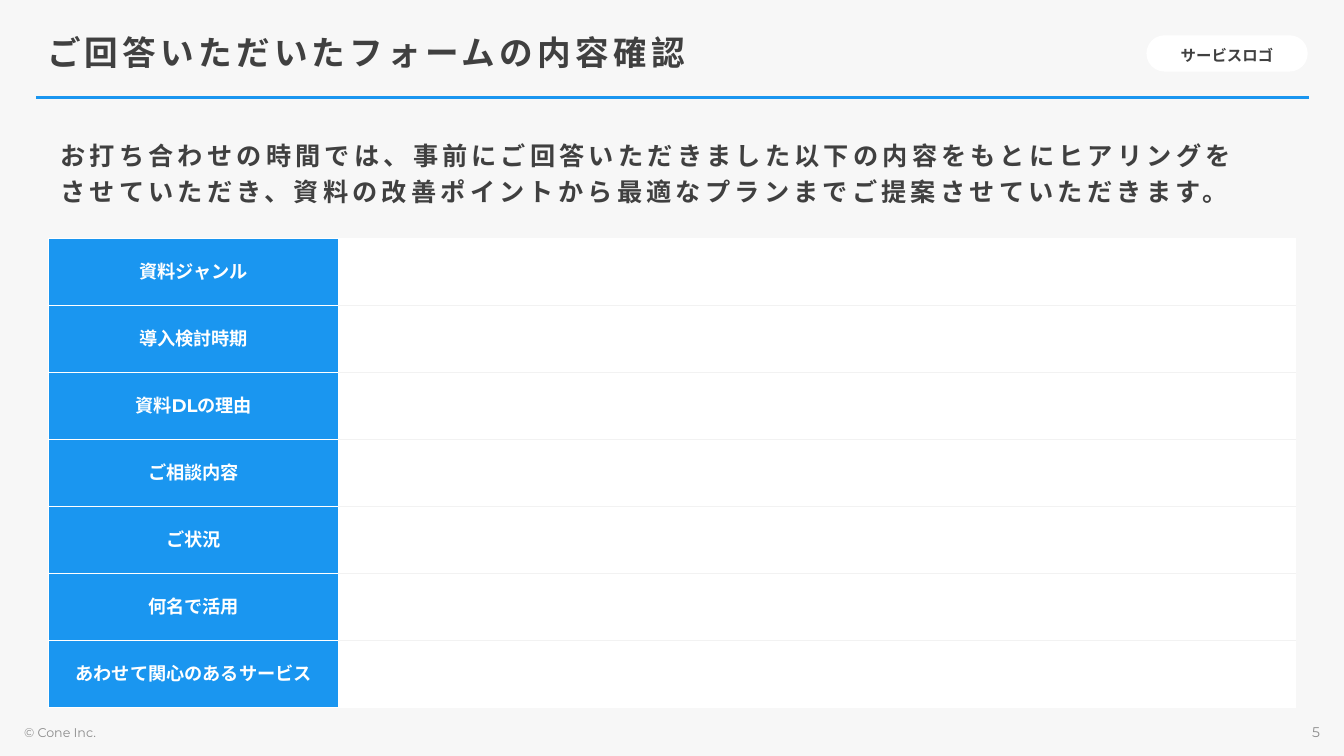
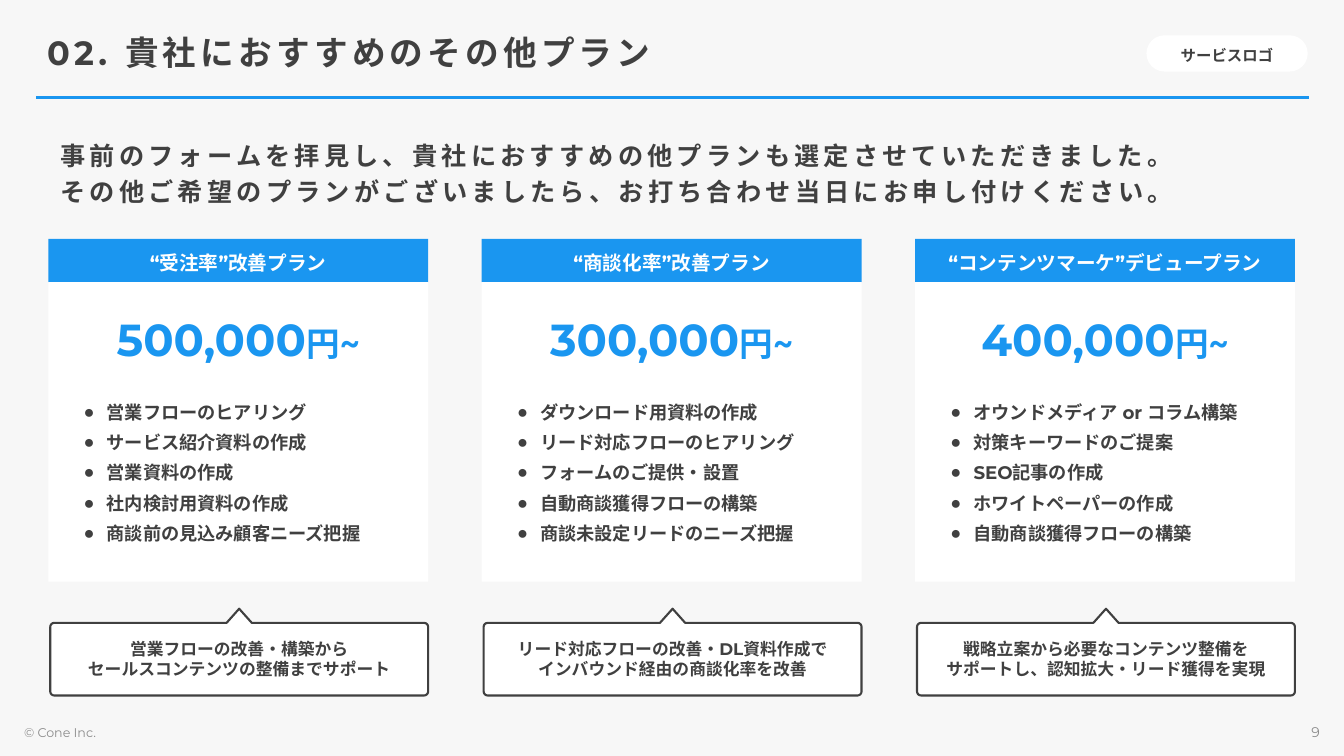
"""Build a form confirmation slide and a recommended plans slide."""
import math
from dataclasses import dataclass

from lxml import etree
from pptx import Presentation
from pptx import util as u
from pptx.dml.color import RGBColor
from pptx.enum import shapes, text
from pptx.oxml.ns import qn


@dataclass(frozen=True)
class Theme:
    """Colours, font and type sizes shared by the slides."""
    font: str = "Montserrat"
    page: str = "F7F7F7"
    rule: str = "F2F2F2"
    accent: str = "1A96F0"
    paper: str = "FFFFFF"
    ink: str = "404040"
    muted: str = "8C8C8C"
    title: int = 24
    lead: int = 18
    price: int = 32
    plan: int = 14
    item: int = 13
    note: int = 12
    logo: int = 11
    number: int = 10
    footer: int = 9


@dataclass(frozen=True)
class Box:
    """A rectangle in inches, divided into 100 columns and 100 rows."""
    left: float
    top: float
    width: float
    height: float

    def area(self, column, row, columns, rows):
        """Return the box that covers the given columns and rows."""
        return Box(self.left + self.width * column / 100, self.top + self.height * row / 100,
                   self.width * columns / 100, self.height * rows / 100)

    def columns(self, count, gap):
        """Return equal boxes side by side, with gaps given in columns."""
        share = (100 - gap * (count - 1)) / count
        return [self.area(index * (share + gap), 0, share, 100) for index in range(count)]

    def emu(self):
        """Return left, top, width and height as lengths."""
        return [u.Inches(value) for value in (self.left, self.top, self.width, self.height)]


THEME = Theme()
PAGE = Box(0, 0, 13.33, 7.5)
CONTENT = PAGE.area(3.6, 31.6, 92.75, 62)
PLANS = PAGE.area(3.6, 31.6, 92.75, 60.4)
LABEL_INSETS = (0.1, 0.08, 0.1, 0.04)
CENTER = text.PP_ALIGN.CENTER
MIDDLE = text.MSO_ANCHOR.MIDDLE


def rgb(value):
    """Turn a hex string into a colour."""
    return RGBColor.from_string(value)


def style(para, size, color, bold=True, tracking=0, bullet=None):
    """Set the bullet and the font of one paragraph."""
    props = para._p.get_or_add_pPr()
    if bullet:
        props.set("marL", str(u.Inches(0.27)))
        props.set("indent", str(u.Inches(-0.23)))
        etree.SubElement(props, qn("a:buFont"), typeface="Arial")
        etree.SubElement(props, qn("a:buChar"), char=bullet)
    para.font.name = THEME.font
    para.font.size = u.Pt(size)
    para.font.bold = bold
    para.font.color.rgb = rgb(color)
    default = props.find(qn("a:defRPr"))
    etree.SubElement(default, qn("a:ea"), typeface=THEME.font)
    if tracking:
        default.set("spc", str(tracking * 100))


def write(frame, lines, size, color, insets=(0.1, 0.05, 0.1, 0.05), anchor=MIDDLE,
          align=text.PP_ALIGN.LEFT, leading=None, before=0, **font):
    """Fill a text frame with one paragraph for each line."""
    frame.word_wrap = True
    frame.vertical_anchor = anchor
    (frame.margin_left, frame.margin_top,
     frame.margin_right, frame.margin_bottom) = map(u.Inches, insets)
    for index, line in enumerate(lines):
        para = frame.add_paragraph() if index else frame.paragraphs[0]
        para.add_run().text = line
        para.alignment = align
        if leading:
            para.line_spacing = leading
        if index and before:
            para.space_before = u.Pt(before)
        style(para, size, color, **font)


def add_text(page, box, lines, size, color, **options):
    """Add a text box."""
    label = page.shapes.add_textbox(*box.emu())
    write(label.text_frame, lines, size, color, **options)
    return label


def add_panel(page, box, fill, kind=shapes.MSO_SHAPE.RECTANGLE):
    """Add a filled shape without outline."""
    panel = page.shapes.add_shape(kind, *box.emu())
    panel.shadow.inherit = False
    panel.fill.solid()
    panel.fill.fore_color.rgb = rgb(fill)
    panel.line.fill.background()
    return panel


def add_rule(page, box):
    """Draw the accent line along the top of a box."""
    left, top, width, _ = box.emu()
    rule = page.shapes.add_connector(shapes.MSO_CONNECTOR.STRAIGHT, left, top, left + width, top)
    rule.line.color.rgb = rgb(THEME.accent)
    rule.line.width = u.Pt(2)
    etree.SubElement(rule._element.spPr, qn("a:effectLst"))


def add_page(deck, title, lead, number):
    """Add a slide with its title band, lead text and footer."""
    page = deck.slides.add_slide(deck.slide_layouts[6])
    page.background.fill.solid()
    page.background.fill.fore_color.rgb = rgb(THEME.page)
    add_rule(page, PAGE.area(2.7, 12.93, 94.67, 0))
    add_text(page, PAGE.area(2.78, 2.8, 82, 8.4), [title], THEME.title, THEME.ink,
             insets=(0.1, 0.08, 0.1, 0.05), leading=0.9, tracking=3)
    logo = add_panel(page, PAGE.area(85.3, 4.67, 12, 4.8), THEME.paper,
                     shapes.MSO_SHAPE.ROUNDED_RECTANGLE)
    logo.adjustments[0] = 0.5
    write(logo.text_frame, ["サービスロゴ"], THEME.logo, THEME.ink,
          insets=LABEL_INSETS, align=CENTER)
    add_text(page, PAGE.area(3.75, 16.93, 92.5, 12.13), lead, THEME.lead, THEME.ink,
             insets=(0.1, 0.16, 0.1, 0.05), anchor=text.MSO_ANCHOR.TOP,
             leading=0.9, before=6, tracking=3)
    add_text(page, PAGE.area(1.05, 95.07, 22.5, 3.6), ["© Cone Inc."],
             THEME.footer, THEME.muted, bold=False)
    add_text(page, PAGE.area(76.45, 95.07, 22.5, 3.6), [str(number)],
             THEME.number, THEME.muted, bold=False, align=text.PP_ALIGN.RIGHT)
    return page


def paint_cell(cell, fill, borders):
    """Set the fill and the borders of a table cell."""
    props = cell._tc.get_or_add_tcPr()
    for side in ("L", "R", "T", "B"):
        line = etree.SubElement(props, qn(f"a:ln{side}"), w=str(u.Pt(1)))
        solid = etree.SubElement(line, qn("a:solidFill"))
        etree.SubElement(solid, qn("a:srgbClr"), val=borders.get(side, THEME.paper))
    cell.fill.solid()
    cell.fill.fore_color.rgb = rgb(fill)


def add_form(page, box, labels):
    """Add the table of form labels with empty answers."""
    table = page.shapes.add_table(len(labels), 2, *box.emu()).table
    table.first_row = table.horz_banding = False
    for column, share in zip(table.columns, (23.3, 76.7)):
        column.width = u.Inches(box.width * share / 100)
    last = len(labels) - 1
    for index, label in enumerate(labels):
        table.rows[index].height = u.Inches(box.height / len(labels))
        name, answer = table.cell(index, 0), table.cell(index, 1)
        write(name.text_frame, [label], THEME.item, THEME.paper, align=CENTER)
        name.vertical_anchor = MIDDLE
        paint_cell(name, THEME.accent, {})
        inner = {"T": index > 0, "B": index < last}
        paint_cell(answer, THEME.paper, {side: THEME.rule for side, shown in inner.items() if shown})


def callout_points(box):
    """Return the outline of a rounded box with a pointer on top."""
    radius, half, rise = 0.04, 0.125, box.height * 0.163
    right, bottom = box.left + box.width, box.top + box.height
    middle, shoulder = box.left + box.width / 2, box.top + rise
    corners = [(right - radius, shoulder + radius), (right - radius, bottom - radius),
               (box.left + radius, bottom - radius), (box.left + radius, shoulder + radius)]
    points = [(middle, box.top), (middle + half, shoulder)]
    for quarter, (x, y) in enumerate(corners):
        for step in range(5):
            angle = math.radians(90 * (quarter - 1) + 22.5 * step)
            points.append((x + radius * math.cos(angle), y + radius * math.sin(angle)))
    return points + [(middle - half, shoulder)]


def add_callout(page, box, lines):
    """Add the outlined note that points up at its card."""
    start, *rest = [(u.Inches(x), u.Inches(y)) for x, y in callout_points(box)]
    builder = page.shapes.build_freeform(*start)
    builder.add_line_segments(rest, close=True)
    note = builder.convert_to_shape()
    note.shadow.inherit = False
    note.fill.solid()
    note.fill.fore_color.rgb = rgb(THEME.paper)
    note.line.color.rgb = rgb(THEME.ink)
    note.line.width = u.Pt(1.5)
    write(note.text_frame, lines, THEME.note, THEME.ink,
          insets=(0.1, 0.22, 0.1, 0.08), align=CENTER)


def add_plan(page, box, name, price, items, note):
    """Add one plan: heading, price, list of items and note."""
    heading = add_panel(page, box.area(0, 0, 100, 9.5), THEME.accent)
    write(heading.text_frame, [name], THEME.plan, THEME.paper, insets=LABEL_INSETS, align=CENTER)
    body = add_panel(page, box.area(0, 9.5, 100, 65.6), THEME.paper)
    write(body.text_frame, items, THEME.item, THEME.ink, insets=(0.31, 1.18, 0.1, 0.04),
          anchor=text.MSO_ANCHOR.TOP, before=6, bullet="●")
    amount = add_text(page, box.area(0, 9.7, 100, 23.2), [price], THEME.title, THEME.accent,
                      insets=LABEL_INSETS, align=CENTER)
    para = amount.text_frame.paragraphs[0]
    para.runs[0].font.size = u.Pt(THEME.price)
    para.add_run().text = "円~"
    add_callout(page, box.area(0.5, 81, 99.5, 19), note)


def form_slide(deck):
    """Build the slide that confirms the form answers."""
    page = add_page(deck, "ご回答いただいたフォームの内容確認", [
        "お打ち合わせの時間では、事前にご回答いただきました以下の内容をもとにヒアリングを",
        "させていただき、資料の改善ポイントから最適なプランまでご提案させていただきます。"], 5)
    add_form(page, CONTENT, ["資料ジャンル", "導入検討時期", "資料DLの理由", "ご相談内容",
                             "ご状況", "何名で活用", "あわせて関心のあるサービス"])


def plans_slide(deck):
    """Build the slide that compares the recommended plans."""
    page = add_page(deck, "02. 貴社におすすめのその他プラン", [
        "事前のフォームを拝見し、貴社におすすめの他プランも選定させていただきました。",
        "その他ご希望のプランがございましたら、お打ち合わせ当日にお申し付けください。"], 9)
    plans = [
        ("“受注率”改善プラン", "500,000",
         ["営業フローのヒアリング", "サービス紹介資料の作成", "営業資料の作成",
          "社内検討用資料の作成", "商談前の見込み顧客ニーズ把握"],
         ["営業フローの改善・構築から", "セールスコンテンツの整備までサポート"]),
        ("“商談化率”改善プラン", "300,000",
         ["ダウンロード用資料の作成", "リード対応フローのヒアリング", "フォームのご提供・設置",
          "自動商談獲得フローの構築", "商談未設定リードのニーズ把握"],
         ["リード対応フローの改善・DL資料作成で", "インバウンド経由の商談化率を改善"]),
        ("“コンテンツマーケ”デビュープラン", "400,000",
         ["オウンドメディア or コラム構築", "対策キーワードのご提案", "SEO記事の作成",
          "ホワイトペーパーの作成", "自動商談獲得フローの構築"],
         ["戦略立案から必要なコンテンツ整備を", "サポートし、認知拡大・リード獲得を実現"]),
    ]
    for box, plan in zip(PLANS.columns(len(plans), 4.3), plans):
        add_plan(page, box, *plan)


def main():
    """Build and save the deck."""
    deck = Presentation()
    deck.slide_width, deck.slide_height = u.Inches(PAGE.width), u.Inches(PAGE.height)
    form_slide(deck)
    plans_slide(deck)
    deck.save("out.pptx")


if __name__ == "__main__":
    main()
